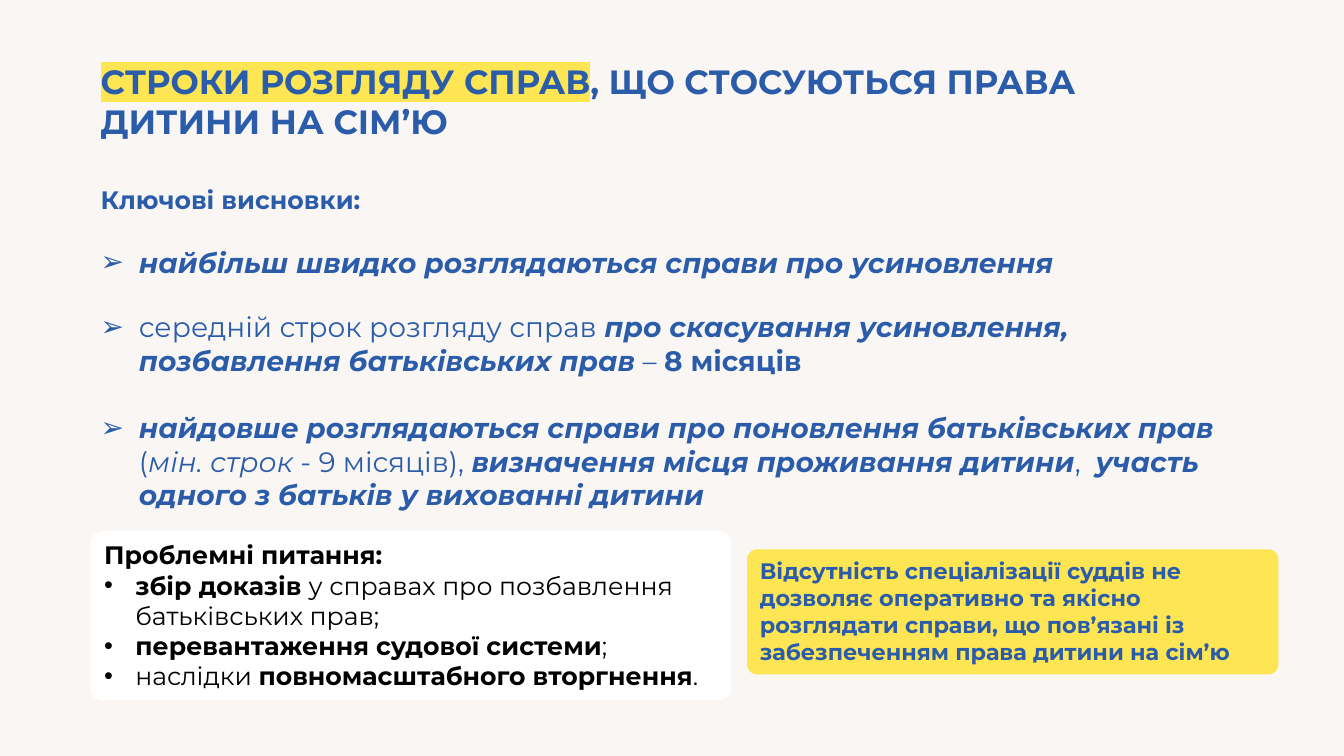
from lxml import etree
from pptx import Presentation
from pptx import util as u
from pptx.dml.color import RGBColor
from pptx.enum import shapes, text
from pptx.oxml.ns import qn

COLORS = {"paper": "F9F6F3", "blue": "2A5CAA", "yellow": "FEE554", "white": "FFFFFF", "black": "000000"}


def write(frame, paragraphs, color, bullet=None, indent=0):
    frame.word_wrap = True
    frame.vertical_anchor = text.MSO_ANCHOR.TOP
    for index, (size, gap, bulleted, spans) in enumerate(paragraphs):
        para = frame.paragraphs[0] if index == 0 else frame.add_paragraph()
        para.alignment = text.PP_ALIGN.LEFT
        para.space_before = u.Pt(gap)
        if bulleted:
            props = para._p.get_or_add_pPr()
            props.set("marL", str(u.Inches(indent)))
            props.set("indent", str(-u.Inches(indent)))
            etree.SubElement(props, qn("a:buFont")).set("typeface", "Arial")
            etree.SubElement(props, qn("a:buChar")).set("char", bullet)
        for words, style in spans:
            span = para.add_run()
            span.text = words
            span.font.name = "Montserrat"
            span.font.size = u.Pt(size)
            span.font.bold = "b" in style
            span.font.italic = "i" in style
            span.font.color.rgb = RGBColor.from_string(COLORS[color])
            if "h" in style:
                highlight = etree.Element(qn("a:highlight"))
                etree.SubElement(highlight, qn("a:srgbClr")).set("val", COLORS["yellow"])
                span.font._element.find(qn("a:solidFill")).addnext(highlight)


def add_card(page, left, top, width, height, fill, radius):
    card = page.shapes.add_shape(
        shapes.MSO_SHAPE.ROUNDED_RECTANGLE,
        u.Inches(left), u.Inches(top), u.Inches(width), u.Inches(height))
    card.adjustments[0] = radius
    card.shadow.inherit = False
    card.fill.solid()
    card.fill.fore_color.rgb = RGBColor.from_string(COLORS[fill])
    card.line.fill.background()
    return card.text_frame


deck = Presentation()
deck.slide_width = u.Inches(13.33)
deck.slide_height = u.Inches(7.5)
page = deck.slides.add_slide(deck.slide_layouts[6])
page.background.fill.solid()
page.background.fill.fore_color.rgb = RGBColor.from_string(COLORS["paper"])

findings = page.shapes.add_textbox(u.Inches(0.9), u.Inches(1.78), u.Inches(11.59), u.Inches(3.37))
write(findings.text_frame, [
    (18, 0, False, [("Ключові висновки:", "b")]),
    (20, 22, True, [("найбільш швидко розглядаються справи про усиновлення", "bi")]),
    (20, 22, True, [
        ("середній строк розгляду справ ", ""),
        ("про скасування усиновлення, позбавлення батьківських прав", "bi"),
        (" – ", ""),
        ("8 місяців", "b")]),
    (20, 24, True, [
        ("найдовше розглядаються справи про поновлення батьківських прав", "bi"),
        (" (", ""),
        ("мін. строк ", "i"),
        ("- 9 місяців), ", ""),
        ("визначення місця проживання дитини", "bi"),
        (",  ", ""),
        ("участь одного з батьків у вихованні дитини", "bi")]),
], "blue", "➢", 0.38)

title = page.shapes.add_textbox(u.Inches(0.9), u.Inches(0.55), u.Inches(10.76), u.Inches(0.91))
write(title.text_frame, [
    (24, 0, False, [
        ("СТРОКИ РОЗГЛЯДУ СПРАВ", "bh"),
        (", ЩО СТОСУЮТЬСЯ ПРАВА ДИТИНИ НА СІМ’Ю", "b")]),
], "blue")

conclusion = add_card(page, 7.41, 5.45, 5.27, 1.24, "yellow", 0.08)
write(conclusion, [
    (16, 0, False, [(
        "Відсутність спеціалізації суддів не дозволяє оперативно та якісно розглядати "
        "справи, що пов’язані із забезпеченням права дитини на сім’ю", "b")]),
], "blue")

problems = add_card(page, 0.9, 5.27, 6.35, 1.68, "white", 0.07)
write(problems, [
    (18, 0, False, [("Проблемні питання:", "b")]),
    (18, 0, True, [("збір доказів ", "b"), ("у справах про позбавлення батьківських прав;", "")]),
    (18, 0, True, [("перевантаження судової системи", "b"), (";", "")]),
    (18, 0, True, [("наслідки ", ""), ("повномасштабного вторгнення", "b"), (".", "")]),
], "black", "•", 0.31)

deck.save("out.pptx")
